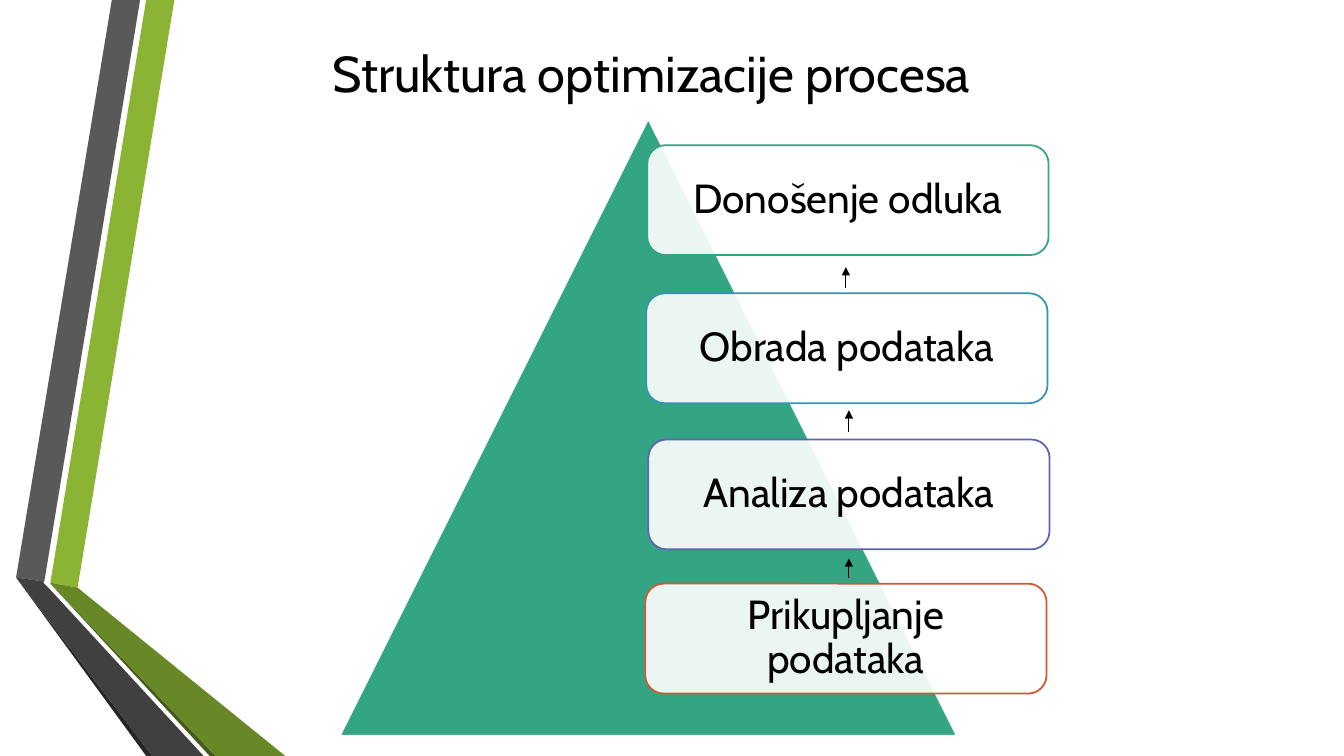
from dataclasses import dataclass

from lxml import etree
from pptx import Presentation
from pptx.dml.color import RGBColor
from pptx.enum.shapes import MSO_CONNECTOR, MSO_SHAPE
from pptx.enum.text import MSO_ANCHOR, PP_ALIGN
from pptx.oxml.ns import qn
from pptx.util import Inches, Pt

LINE = MSO_CONNECTOR.STRAIGHT
PYRAMID = MSO_SHAPE.ISOSCELES_TRIANGLE
ROUND = MSO_SHAPE.ROUNDED_RECTANGLE
MIDDLE = MSO_ANCHOR.MIDDLE
CENTER = PP_ALIGN.CENTER


@dataclass(frozen=True)
class Theme:
    font: str = "Cabin"
    title: float = 36
    label: float = 29
    edge: float = 1.25
    arrow: float = 0.75
    ink: str = "000000"
    paper: str = "FFFFFF"
    green: str = "33A583"
    blue: str = "3594B4"
    violet: str = "6063B4"
    orange: str = "D35731"
    lime: str = "8BB434"
    olive: str = "688727"
    moss: str = "465A1A"
    gray: str = "595959"
    dark: str = "404040"
    black: str = "262626"


THEME = Theme()

# Ribbon outlines, in inches from the top left of their box
RIBBONS = [
    (THEME.lime, [(0.5, 5.78), (0.77, 5.83), (1.73, 0), (1.45, 0)]),
    (THEME.gray, [(1.39, 0), (1.11, 0), (0.16, 5.73), (0.44, 5.77)]),
    (THEME.black, [(0.16, 5.73), (1.45, 7.5), (1.51, 7.5)]),
    (THEME.moss, [(0.5, 5.79), (2.08, 7.5), (2.14, 7.5)]),
    (THEME.olive, [(0.5, 5.79), (2.14, 7.5), (2.83, 7.5), (0.77, 5.83),
                   (0.5, 5.78)]),
    (THEME.dark, [(2.02, 7.5), (0.48, 5.83), (0.43, 5.78), (0.44, 5.77),
                  (0.16, 5.73), (1.51, 7.5)]),
]

# Steps: label, edge colour, offset from the pyramid's box
STEPS = [
    ("Donošenje odluka", THEME.green, 3.05, 0.26),
    ("Obrada podataka", THEME.blue, 3.04, 1.73),
    ("Analiza podataka", THEME.violet, 3.06, 3.18),
    ("Prikupljanje podataka", THEME.orange, 3.03, 4.61),
]

# Arrows: offset x, start y and end y from the pyramid's box
ARROWS = [(5.05, 3.11, 2.89), (5.05, 4.55, 4.36), (5.02, 1.68, 1.47)]


def rgb(code):
    return RGBColor.from_string(code)


def paint(shape, fill, edge=None):
    shape.shadow.inherit = False
    shape.fill.solid()
    shape.fill.fore_color.rgb = rgb(fill)
    if edge:
        shape.line.color.rgb = rgb(edge)
        shape.line.width = Pt(THEME.edge)
    else:
        shape.line.fill.background()


def write(shape, text, size, inset):
    frame = shape.text_frame
    frame.word_wrap = True
    frame.vertical_anchor = MIDDLE
    frame.margin_left = frame.margin_right = Inches(inset)
    frame.margin_top = frame.margin_bottom = Inches(inset)
    frame.text = text
    para = frame.paragraphs[0]
    para.alignment = CENTER
    font = para.runs[0].font
    font.name = THEME.font
    font.size = Pt(size)
    font.color.rgb = rgb(THEME.ink)
    return para


def add_ribbons(slide, left, top):
    for color, points in RIBBONS:
        spots = [(Inches(left + x), Inches(top + y)) for x, y in points]
        pen = slide.shapes.build_freeform(*spots[0])
        pen.add_line_segments(spots[1:], close=True)
        paint(pen.convert_to_shape(), color)


def add_title(slide, left, top, width, height):
    box = slide.shapes.add_textbox(
        Inches(left), Inches(top), Inches(width), Inches(height))
    write(box, "Struktura optimizacije procesa", THEME.title, 0.05)


def add_step(slide, text, color, left, top, width=3.98, height=1.09):
    card = slide.shapes.add_shape(
        ROUND, Inches(left), Inches(top), Inches(width), Inches(height))
    paint(card, THEME.paper, color)
    # Let the pyramid show faintly through the card
    tint = card.fill._xPr.find(qn("a:solidFill"))[0]
    etree.SubElement(tint, qn("a:alpha"), val="90000")
    para = write(card, text, THEME.label, 0.17)
    para.line_spacing = 0.9


def add_arrow(slide, x, start, end):
    arrow = slide.shapes.add_connector(
        LINE, Inches(x), Inches(start), Inches(x), Inches(end))
    arrow.line.color.rgb = rgb(THEME.ink)
    arrow.line.width = Pt(THEME.arrow)
    stroke = arrow.line._get_or_add_ln()
    etree.SubElement(stroke, qn("a:tailEnd"), type="triangle")
    etree.SubElement(arrow._element.spPr, qn("a:effectLst"))


def add_pyramid(slide, left, top, size):
    body = slide.shapes.add_shape(
        PYRAMID, Inches(left), Inches(top), Inches(size), Inches(size))
    paint(body, THEME.green, THEME.paper)
    for text, color, x, y in STEPS:
        add_step(slide, text, color, left + x, top + y)
    for x, start, end in ARROWS:
        add_arrow(slide, left + x, top + start, top + end)


def main():
    deck = Presentation()
    deck.slide_width = Inches(13.33)
    deck.slide_height = Inches(7.5)
    slide = deck.slides.add_slide(deck.slide_layouts[6])
    add_ribbons(slide, 0, 0)
    add_title(slide, 0.98, 0.37, 10.96, 0.7)
    add_pyramid(slide, 3.37, 1.18, 6.12)
    deck.save("out.pptx")


if __name__ == "__main__":
    main()
